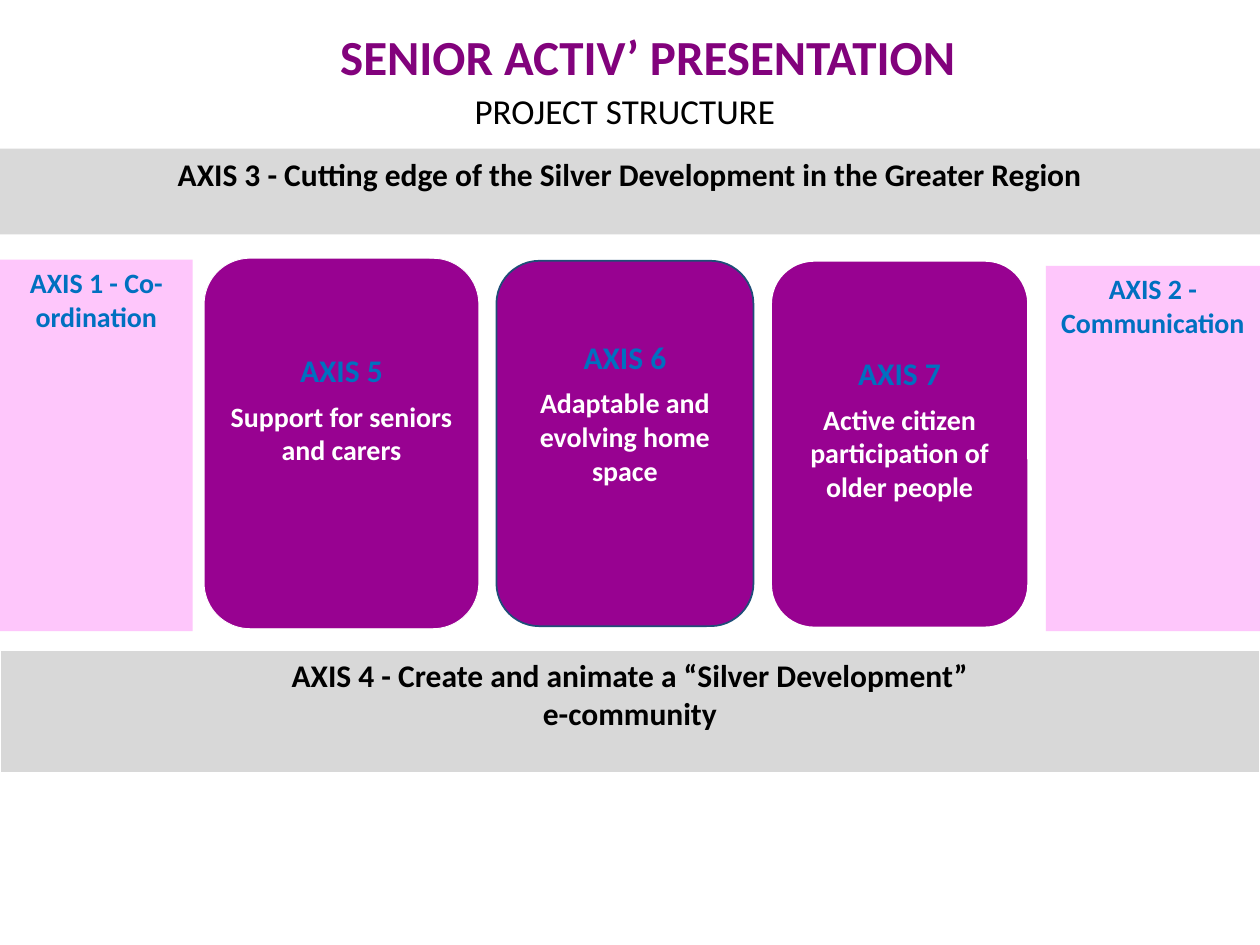
from dataclasses import dataclass

from pptx import Presentation
from pptx.dml.color import RGBColor
from pptx.enum import shapes, text
from pptx.util import Inches, Pt


@dataclass(frozen=True)
class Theme:
    font: str = "Calibri"
    title: str = "82027C"
    black: str = "000000"
    white: str = "FFFFFF"
    blue: str = "0070C0"
    pink: str = "FEC6FB"
    purple: str = "980291"
    navy: str = "1F4D78"
    grey: str = "D9D9D9"
    dark_grey: str = "D8D8D8"
    title_size: int = 28
    subtitle_size: int = 20
    heading_size: int = 18
    body_size: int = 16


THEME = Theme()


def rgb(value):
    return RGBColor.from_string(value)


def write(tf, lines, bold=True, gap=0):
    """Write centred paragraphs from (text, size, colour) lines."""
    tf.word_wrap = True
    for i, (words, size, color) in enumerate(lines):
        p = tf.add_paragraph() if i else tf.paragraphs[0]
        p.alignment = text.PP_ALIGN.CENTER
        if i and gap:
            p.space_before = Pt(gap)
        r = p.add_run()
        r.text = words
        r.font.name = THEME.font
        r.font.size = Pt(size)
        r.font.bold = bold
        r.font.color.rgb = rgb(color)


def add_box(slide, kind, box, fill, line=None, width=0):
    sp = slide.shapes.add_shape(kind, *map(Inches, box))
    sp.shadow.inherit = False
    sp.fill.solid()
    sp.fill.fore_color.rgb = rgb(fill)
    if line:
        sp.line.color.rgb = rgb(line)
        sp.line.width = Pt(width)
    else:
        sp.line.fill.background()
    sp.text_frame.vertical_anchor = text.MSO_ANCHOR.TOP
    return sp


def add_panel(slide, box, fill, lines, size, color, line=None, width=0):
    sp = add_box(slide, shapes.MSO_SHAPE.RECTANGLE, box, fill, line, width)
    write(sp.text_frame, [(words, size, color) for words in lines])


def add_card(slide, box, inset, heading, body, line, width):
    sp = add_box(slide, shapes.MSO_SHAPE.ROUNDED_RECTANGLE, box,
                 THEME.purple, line, width)
    sp.adjustments[0] = 0.167
    sp.text_frame.margin_top = Inches(inset)
    write(sp.text_frame, [(heading, THEME.heading_size, THEME.blue),
                          (body, THEME.body_size, THEME.white)], gap=6)


def add_label(slide, box, words, size, color, bold):
    sp = slide.shapes.add_textbox(*map(Inches, box))
    write(sp.text_frame, [(words, size, color)], bold)


def main():
    prs = Presentation()
    prs.slide_width, prs.slide_height = Inches(10), Inches(7.5)
    s = prs.slides.add_slide(prs.slide_layouts[6])

    # Side panels
    for box, words in (
        ((0, 2.06, 1.53, 2.95), "AXIS 1 - Co-ordination"),
        ((8.3, 2.11, 1.7, 2.9), "AXIS 2 - Communication"),
    ):
        add_panel(s, box, THEME.pink, [words], THEME.body_size, THEME.blue)

    # Top and bottom bands
    add_panel(s, (0, 1.18, 10, 0.68), THEME.grey,
              ["AXIS 3 - Cutting edge of the Silver Development in the Greater Region"],
              THEME.heading_size, THEME.black)
    add_panel(s, (0, 5.16, 10, 0.97), THEME.dark_grey,
              ["AXIS 4 - Create and animate a “Silver Development”", "e-community"],
              THEME.heading_size, THEME.black, THEME.white, 0.75)

    # Central axis cards
    for card in (
        ((1.62, 2.05, 2.18, 2.94), 0.63, "AXIS 5",
         "Support for seniors and carers", THEME.white, 0.5),
        ((3.94, 2.07, 2.04, 2.9), 0.51, "AXIS 6",
         "Adaptable and evolving home space", THEME.navy, 1),
        ((6.12, 2.07, 2.04, 2.91), 0.64, "AXIS 7",
         "Active citizen participation of older people", THEME.white, 1),
    ):
        add_card(s, *card)

    # Title and subtitle
    add_label(s, (0.64, 0.16, 9, 1.25), "SENIOR ACTIV’ PRESENTATION",
              THEME.title_size, THEME.title, True)
    add_label(s, (0.46, 0.66, 9, 1.25), "PROJECT STRUCTURE",
              THEME.subtitle_size, THEME.black, False)

    prs.save("out.pptx")


if __name__ == "__main__":
    main()
